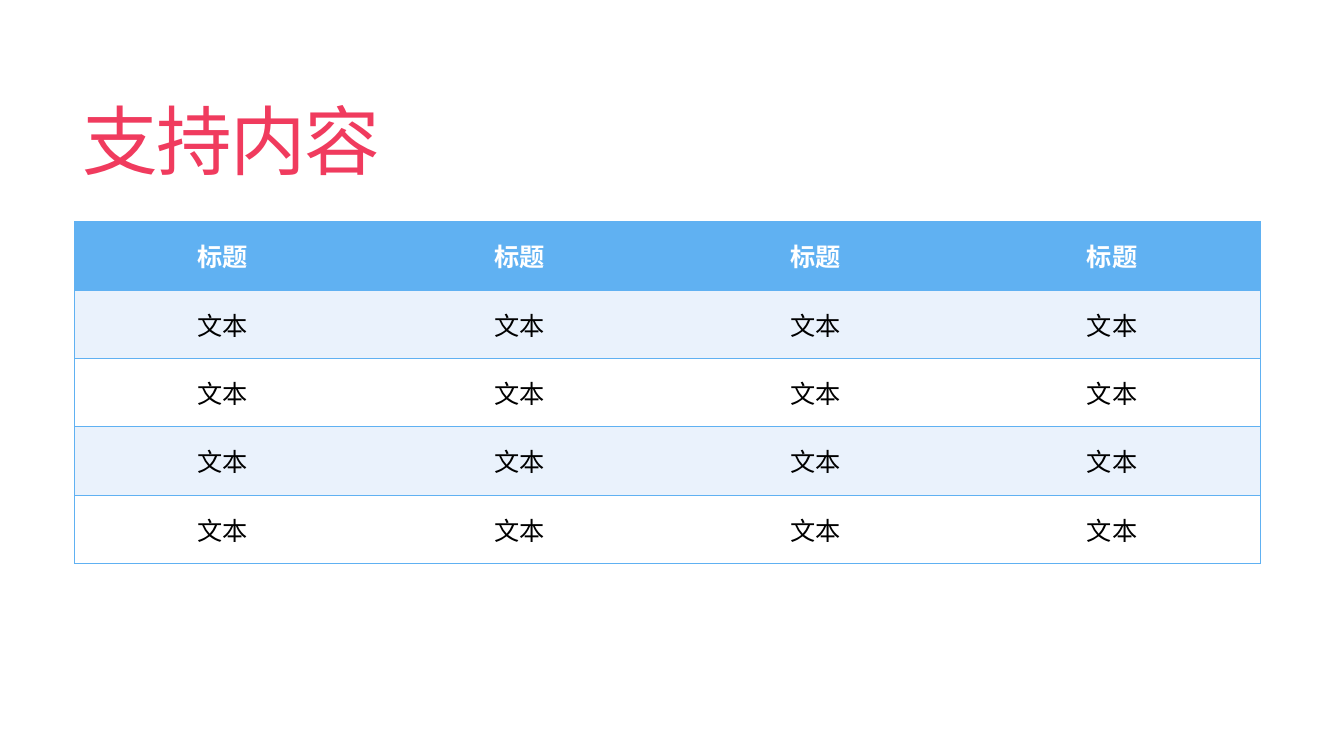
from dataclasses import dataclass

from lxml.etree import SubElement as Sub
from pptx import Presentation
from pptx.dml.color import RGBColor as RGB
from pptx.enum.text import MSO_ANCHOR as Anchor, MSO_AUTO_SIZE as Fit, PP_ALIGN as Align
from pptx.oxml.ns import qn
from pptx.util import Inches, Pt


@dataclass(frozen=True)
class Theme:
    font: str = "Noto Sans CJK SC"
    pink: str = "F03B5E"
    blue: str = "60B1F2"
    pale: str = "EAF2FC"
    white: str = "FFFFFF"
    black: str = "000000"
    title: float = 54
    body: float = 18
    line: float = 1


theme = Theme()


def write(frame, text, size, color, bold=False, align=Align.LEFT, lead=None, track=None):
    para = frame.paragraphs[0]
    para.alignment = align
    para.line_spacing = lead
    run = para.add_run()
    run.text = text
    font = run.font
    font.name, font.size, font.bold = theme.font, Pt(size), bold
    font.color.rgb = RGB.from_string(color)
    props = run._r.get_or_add_rPr()
    Sub(props, qn("a:ea")).set("typeface", theme.font)
    if track is not None:
        props.set("spc", str(round(track * 100)))


def edge(cell, side, color=None):
    line = Sub(cell._tc.get_or_add_tcPr(), qn(f"a:ln{side}"), w=str(Pt(theme.line)))
    if color:
        Sub(Sub(line, qn("a:solidFill")), qn("a:srgbClr"), val=color)
    else:
        Sub(line, qn("a:noFill"))


# Slide
deck = Presentation()
deck.slide_width, deck.slide_height = Inches(13.33), Inches(7.5)
slide = deck.slides.add_slide(deck.slide_layouts[5])

# Title
title = slide.shapes.title
title.left, title.top = Inches(0.72), Inches(0.55)
title.width, title.height = Inches(11.78), Inches(1.81)
frame = title.text_frame
frame.auto_size, frame.word_wrap = Fit.NONE, True
frame.vertical_anchor = Anchor.MIDDLE
write(frame, "支持内容", theme.title, theme.pink, lead=0.85, track=-1.2)

# Table: one header row, then banded rows
cols = 4
data = [["标题"] * cols] + [["文本"] * cols for _ in range(4)]
table = slide.shapes.add_table(
    len(data), cols, Inches(0.74), Inches(2.2), Inches(11.76), Inches(3.39)
).table

for r, row in enumerate(data):
    head = r == 0
    fill = theme.blue if head else theme.pale if r % 2 else theme.white
    for c, text in enumerate(row):
        cell = table.cell(r, c)
        cell.vertical_anchor = Anchor.MIDDLE
        write(cell.text_frame, text, theme.body, theme.white if head else theme.black,
              bold=head, align=Align.CENTER)
        # Only the outer sides have vertical lines
        edge(cell, "L", theme.blue if c == 0 else None)
        edge(cell, "R", theme.blue if c == cols - 1 else None)
        edge(cell, "T", theme.blue)
        edge(cell, "B", theme.blue)
        cell.fill.solid()
        cell.fill.fore_color.rgb = RGB.from_string(fill)

deck.save("out.pptx")
